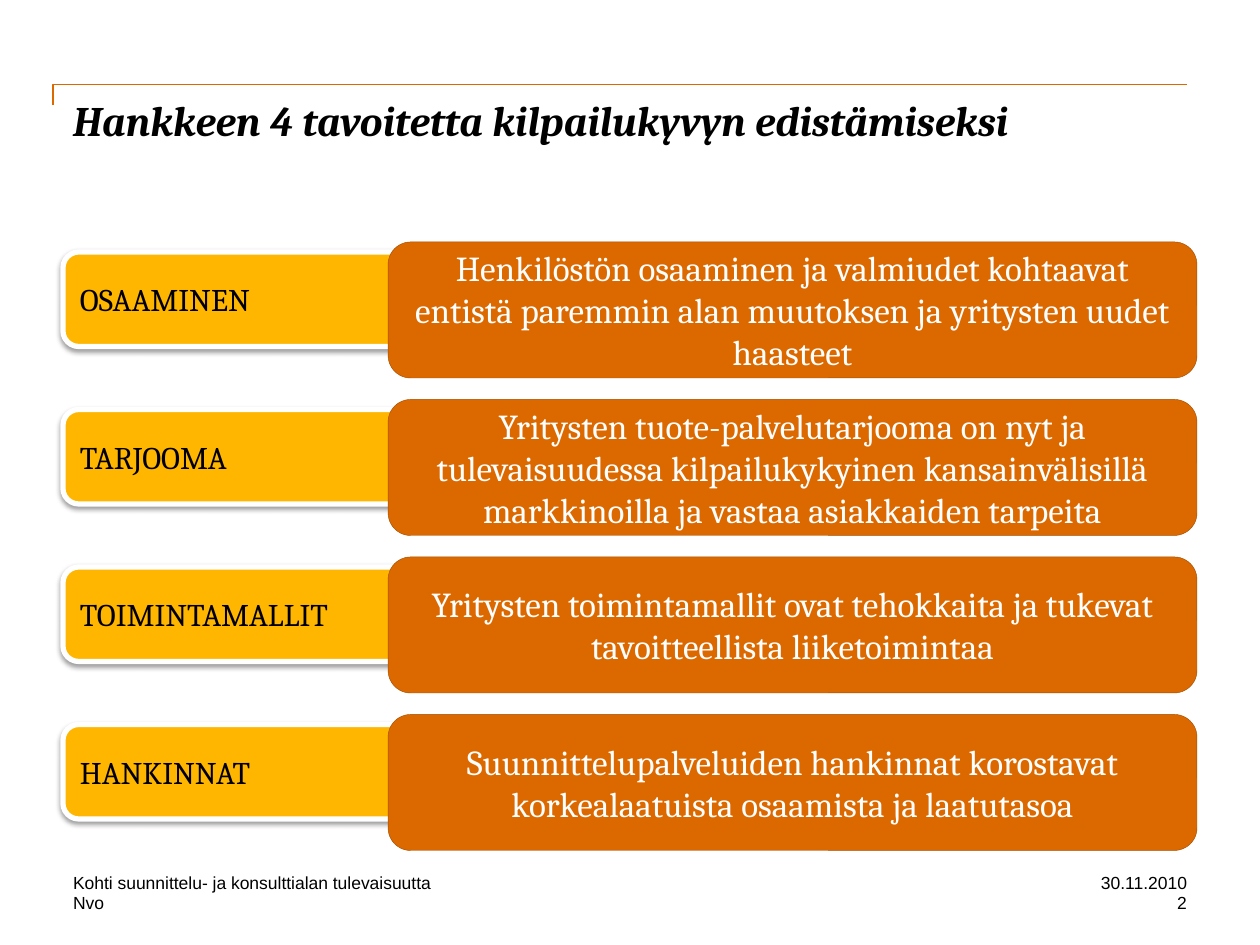
from lxml import etree
from pptx import Presentation
from pptx.dml.color import RGBColor
from pptx.enum.shapes import MSO_SHAPE as SHAPE
from pptx.enum.text import MSO_ANCHOR as ANCHOR, MSO_AUTO_SIZE as AUTO, PP_ALIGN as ALIGN
from pptx.oxml.ns import qn
from pptx.util import Inches, Pt

BLACK = RGBColor(0x00, 0x00, 0x00)
WHITE = RGBColor(0xFF, 0xFF, 0xFF)
YELLOW = RGBColor(0xFF, 0xB6, 0x00)
ORANGE = RGBColor(0xDC, 0x69, 0x00)
BROWN = RGBColor(0xA3, 0x4E, 0x00)

GOALS = [
    ("OSAAMINEN", "Henkilöstön osaaminen ja valmiudet kohtaavat entistä paremmin "
                  "alan muutoksen ja yritysten uudet haasteet"),
    ("TARJOOMA", "Yritysten tuote-palvelutarjooma on nyt ja tulevaisuudessa kilpailukykyinen "
                 "kansainvälisillä markkinoilla ja vastaa asiakkaiden tarpeita"),
    ("TOIMINTAMALLIT", "Yritysten toimintamallit ovat tehokkaita ja tukevat "
                       "tavoitteellista liiketoimintaa"),
    ("HANKINNAT", "Suunnittelupalveluiden hankinnat korostavat korkealaatuista "
                  "osaamista ja laatutasoa"),
]
ROW_TOP, ROW_STEP = 2, 1.25


class SlideBuilder:
    heading_font = "Cambria"
    footer_font = "Arial"

    def __init__(self, slide):
        self.s = slide

    def add_text(self, tf, text, font, size, color, align=ALIGN.LEFT,
                 anchor=ANCHOR.MIDDLE, flush=False, emphasis=False):
        tf.word_wrap = True
        tf.auto_size = AUTO.NONE
        tf.vertical_anchor = anchor
        if flush:
            tf.margin_left = tf.margin_right = tf.margin_top = tf.margin_bottom = 0
        p = tf.paragraphs[0]
        p.alignment = align
        r = p.add_run()
        r.text = text
        r.font.name, r.font.size = font, Pt(size)
        r.font.color.rgb = color
        r.font.bold = r.font.italic = emphasis

    def title(self, text, x, y, w, h):
        sp = self.s.shapes.title
        sp.left, sp.top, sp.width, sp.height = map(Inches, (x, y, w, h))
        self.add_text(sp.text_frame, text, self.heading_font, 24, BLACK,
                      anchor=ANCHOR.TOP, flush=True, emphasis=True)

    def footer(self, text, x, y, w, align=ALIGN.LEFT, anchor=ANCHOR.TOP):
        sp = self.s.shapes.add_textbox(Inches(x), Inches(y), Inches(w), Inches(0.17))
        self.add_text(sp.text_frame, text, self.footer_font, 10, BLACK, align, anchor, flush=True)

    def rule(self, start, *points):
        fb = self.s.shapes.build_freeform(Inches(start[0]), Inches(start[1]))
        fb.add_line_segments([(Inches(x), Inches(y)) for x, y in points], close=False)
        sp = fb.convert_to_shape()
        sp.shadow.inherit = False
        sp.fill.background()
        sp.line.color.rgb = ORANGE
        sp.line.width = Pt(1)

    def box(self, text, x, y, w, h, fill, line, line_width, size, color, align):
        sp = self.s.shapes.add_shape(SHAPE.ROUNDED_RECTANGLE,
                                     Inches(x), Inches(y), Inches(w), Inches(h))
        sp.shadow.inherit = False
        sp.fill.solid()
        sp.fill.fore_color.rgb = fill
        sp.line.color.rgb = line
        sp.line.width = Pt(line_width)
        self.add_text(sp.text_frame, text, self.heading_font, size, color, align)
        return sp

    def drop_shadow(self, sp):
        effects = sp._element.spPr.find(qn("a:effectLst"))
        shadow = etree.SubElement(effects, qn("a:outerShdw"), blurRad=str(Pt(3.1)),
                                  dist=str(Pt(1.6)), dir="5400000", rotWithShape="0")
        color = etree.SubElement(shadow, qn("a:srgbClr"), val=str(BLACK))
        etree.SubElement(color, qn("a:alpha"), val="38000")

    def label(self, text, y):
        sp = self.box(text, 0.5, y, 3, 0.75, YELLOW, WHITE, 3, 18, BLACK, ALIGN.LEFT)
        self.drop_shadow(sp)

    def goal(self, text, y):
        self.box(text, 3.08, y, 6.42, 1.08, ORANGE, BROWN, 0.25, 20, WHITE, ALIGN.CENTER)


def main():
    prs = Presentation()
    prs.slide_width, prs.slide_height = Inches(10), Inches(7.5)
    b = SlideBuilder(prs.slides.add_slide(prs.slide_layouts[5]))

    # Heading and corner rule
    b.rule((0.42, 0.83), (0.42, 0.67), (9.42, 0.67))
    b.title("Hankkeen 4 tavoitetta kilpailukyvyn edistämiseksi", 0.58, 0.75, 8.83, 1)

    # Goals: a label tucked under each description
    for i, (name, description) in enumerate(GOALS):
        y = ROW_TOP + i * ROW_STEP
        b.label(name, y)
        b.goal(description, y - 0.08)

    # Footer
    b.footer("Kohti suunnittelu- ja konsulttialan tulevaisuutta", 0.58, 6.92, 5.75,
             anchor=ANCHOR.BOTTOM)
    b.footer("Nvo", 0.58, 7.08, 2.83)
    b.footer("30.11.2010", 7.75, 6.92, 1.67, ALIGN.RIGHT)
    b.footer("2", 7.75, 7.08, 1.67, ALIGN.RIGHT)

    prs.save("out.pptx")


if __name__ == "__main__":
    main()
